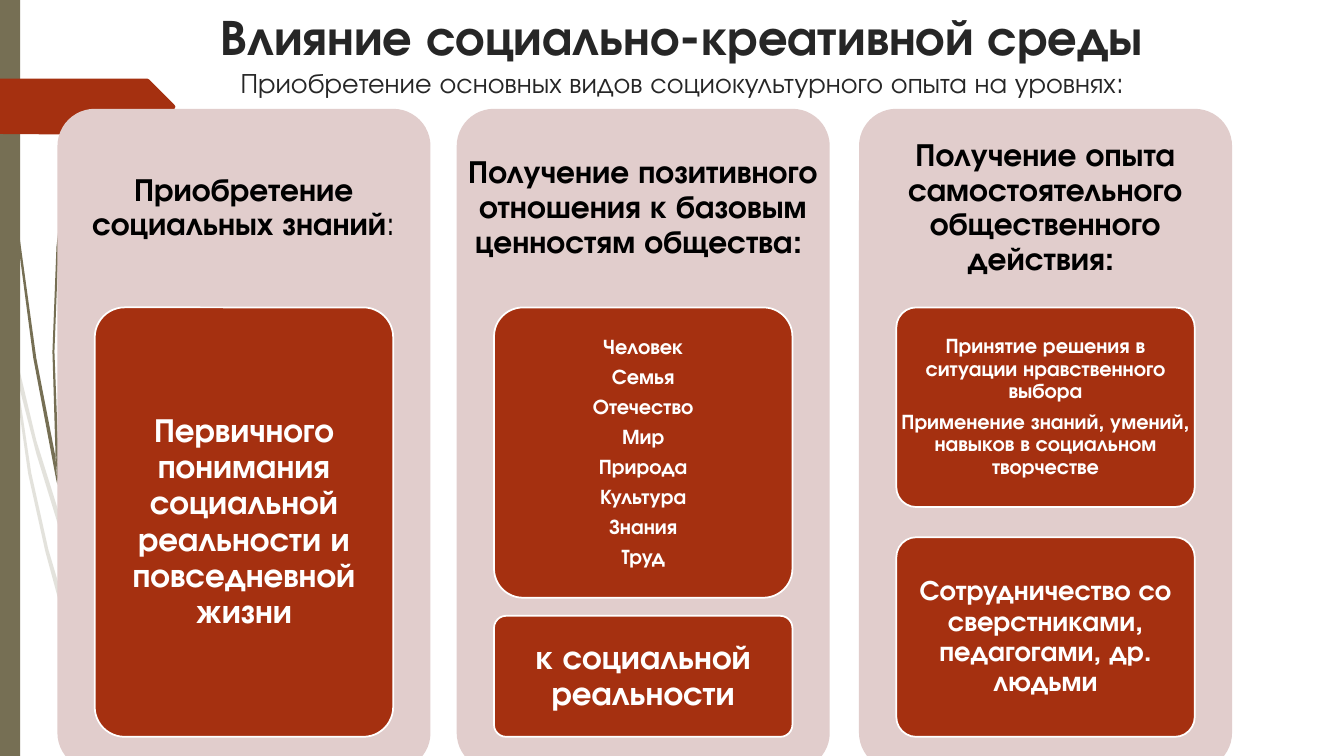
from dataclasses import dataclass

from pptx import Presentation
from pptx.dml.color import RGBColor
from pptx.enum.shapes import MSO_SHAPE
from pptx.enum.text import MSO_ANCHOR, PP_ALIGN
from pptx.oxml.ns import qn
from pptx.shapes.base import BaseShape
from pptx.slide import Slide
from pptx.util import Inches, Pt
from lxml import etree

RECT, ROUND = MSO_SHAPE.RECTANGLE, MSO_SHAPE.ROUNDED_RECTANGLE
TOP, MID = MSO_ANCHOR.TOP, MSO_ANCHOR.MIDDLE
CENTER = PP_ALIGN.CENTER

Box = tuple[float, float, float, float]
Point = tuple[float, float]


@dataclass(frozen=True)
class Theme:
    font: str = "TeX Gyre Adventor"
    olive: str = "766F54"
    rust: str = "A53010"
    rose: str = "E1CDCC"
    ink: str = "262626"
    black: str = "000000"
    white: str = "FFFFFF"
    title: int = 36
    sub: int = 20
    head: int = 23
    large: int = 24
    mid: int = 20
    small: int = 15


@dataclass(frozen=True)
class Card:
    """A card that starts at a grid row and spans some rows."""
    text: str
    row: int
    span: int
    size: int
    inset: float


@dataclass(frozen=True)
class Panel:
    head: str
    cards: tuple[Card, ...]
    tail: str = ""


@dataclass(frozen=True)
class Blade:
    points: tuple[Point, ...]
    alpha: int = 100


THEME = Theme()

# Grid in inches: three columns, and 71 card rows below the heads
COLS, WIDTH = (0.57, 4.53, 8.52), 3.7
PANEL_TOP, PANEL_TALL, HEAD_TALL = 1.08, 6.56, 1.97
CARD_WIDE = 2.96
CARD_PAD = (WIDTH - CARD_WIDE) / 2
CARD_TOP, ROW = 3.05, 0.06
UNITS = 100  # outline steps to the inch

PANELS = (
    Panel("Приобретение социальных знаний", (
        Card("Первичного понимания социальной реальности и повседневной жизни",
             0, 71, THEME.large, 0.07),
    ), tail=":"),
    Panel("Получение позитивного отношения к базовым ценностям общества: ", (
        Card("Человек\nСемья\nОтечество\nМир\nПрирода\nКультура\nЗнания\nТруд",
             0, 48, THEME.small, 0.04),
        Card("к социальной реальности", 51, 20, THEME.large, 0.07),
    )),
    Panel("Получение опыта самостоятельного общественного действия: ", (
        Card("Принятие решения в ситуации нравственного выбора\n"
             "Применение знаний, умений, навыков в социальном творчестве",
             0, 33, THEME.small, 0.04),
        Card("Сотрудничество со сверстниками, педагогами, др. людьми",
             38, 33, THEME.mid, 0.06),
    )),
)

BLADES = (
    Blade(((0.58, 5.22), (0.84, 5.99), (0.85, 5.86), (0.62, 5.2),
           (0.36, 4.37), (0.14, 3.45), (0.17, 3.76), (0.36, 4.5)), 20),
    Blade(((0.93, 6.83), (0.7, 6.19), (0.48, 5.45), (0.31, 4.69),
           (0.17, 3.76), (0.11, 3.5), (0.28, 4.7), (0.45, 5.47),
           (0.65, 6.21), (0.92, 6.93), (1.01, 7.14), (0.99, 7.07)), 20),
    Blade(((0.07, 1.1), (0.17, 2.33), (0.33, 3.55), (0.56, 4.77),
           (0.57, 4.81), (0.55, 4.53), (0.36, 3.55), (0.19, 2.32),
           (0.08, 1.09), (0.05, 0.48), (0.03, 0), (0.03, 0.48))),
    Blade(((0.6, 4.72), (0.58, 4.53), (0.54, 3.49), (0.58, 2.45),
           (0.63, 1.93), (0.7, 1.41), (0.62, 1.93), (0.56, 2.45),
           (0.52, 3.49), (0.55, 4.49))),
    Blade(((0.57, 4.77), (0.64, 5.05), (0.6, 4.72), (0.55, 4.49),
           (0.55, 4.53))),
)
BANNER = ((0, 0.78), (1.46, 0.78), (1.48, 0.79), (1.73, 1.04), (1.74, 1.06),
          (1.73, 1.08), (1.48, 1.33), (1.46, 1.34), (0, 1.33))


def paint(shape: BaseShape, color: str, edge: str = "", alpha: int = 100) -> None:
    shape.shadow.inherit = False
    shape.fill.solid()
    shape.fill.fore_color.rgb = RGBColor.from_string(color)
    if alpha < 100:
        tone = next(shape.element.spPr.iter(qn("a:srgbClr")))
        etree.SubElement(tone, qn("a:alpha"), val=str(alpha * 1000))
    if edge:
        shape.line.color.rgb = RGBColor.from_string(edge)
        shape.line.width = Pt(1.25)
    else:
        shape.line.fill.background()


def trace(slide: Slide, points: tuple[Point, ...], color: str, alpha: int = 100) -> None:
    """Draw a closed, filled outline."""
    steps = [(x * UNITS, y * UNITS) for x, y in points]
    pen = slide.shapes.build_freeform(*steps[0], scale=Inches(1) / UNITS)
    pen.add_line_segments(steps[1:], close=True)
    paint(pen.convert_to_shape(), color, alpha=alpha)


def block(slide: Slide, kind: MSO_SHAPE, box: Box, color: str, edge: str = "") -> None:
    shape = slide.shapes.add_shape(kind, *map(Inches, box))
    if kind == ROUND:
        shape.adjustments[0] = 0.1
    paint(shape, color, edge)


def write(slide: Slide, box: Box, text: str, *, size: int, color: str,
          inset: Point = (0.1, 0.05), anchor: MSO_ANCHOR = MID,
          space: float = 0.9, after: float = 0.35,
          tail: str = "", tail_size: int = 0, split: bool = False) -> None:
    """Write bold lines; a plain tail ends the last, after a break if split."""
    frame = slide.shapes.add_textbox(*map(Inches, box)).text_frame
    frame.word_wrap = True
    frame.vertical_anchor = anchor
    frame.margin_left = frame.margin_right = Inches(inset[0])
    frame.margin_top = frame.margin_bottom = Inches(inset[1])

    def add(line, words: str, points: int, bold: bool) -> None:
        run = line.add_run()
        run.text = words
        font = run.font
        font.name, font.size, font.bold = THEME.font, Pt(points), bold
        font.color.rgb = RGBColor.from_string(color)

    for i, words in enumerate(text.split("\n")):
        line = frame.add_paragraph() if i else frame.paragraphs[0]
        line.alignment = CENTER
        line.line_spacing = space
        line.space_after = Pt(size * after)
        add(line, words, size, True)
    if split:
        line.add_line_break()
    if tail:
        add(line, tail, tail_size or size, False)


def draw_panel(slide: Slide, left: float, panel: Panel) -> None:
    block(slide, ROUND, (left, PANEL_TOP, WIDTH, PANEL_TALL), THEME.rose)
    write(slide, (left, PANEL_TOP, WIDTH, HEAD_TALL), panel.head,
          size=THEME.head, color=THEME.black, inset=(0.1, 0.1), tail=panel.tail)
    for card in panel.cards:
        box = (left + CARD_PAD, CARD_TOP + card.row * ROW, CARD_WIDE, card.span * ROW)
        block(slide, ROUND, box, THEME.rust, THEME.white)
        write(slide, box, card.text, size=card.size, color=THEME.white,
              inset=(card.inset, card.inset * 0.75))


def main() -> None:
    deck = Presentation()
    deck.slide_width, deck.slide_height = Inches(13.33), Inches(7.5)
    slide = deck.slides.add_slide(deck.slide_layouts[6])
    for blade in BLADES:
        trace(slide, blade.points, THEME.olive, blade.alpha)
    block(slide, RECT, (0, 0, 0.2, 7.5), THEME.olive)
    trace(slide, BANNER, THEME.rust)
    write(slide, (1.31, 0, 10.91, 1.4), "Влияние социально-креативной среды",
          size=THEME.title, color=THEME.ink, anchor=TOP, space=1.0, after=0,
          tail="Приобретение основных видов социокультурного опыта на уровнях:",
          tail_size=THEME.sub, split=True)
    for left, panel in zip(COLS, PANELS):
        draw_panel(slide, left, panel)
    deck.save("out.pptx")


if __name__ == "__main__":
    main()
